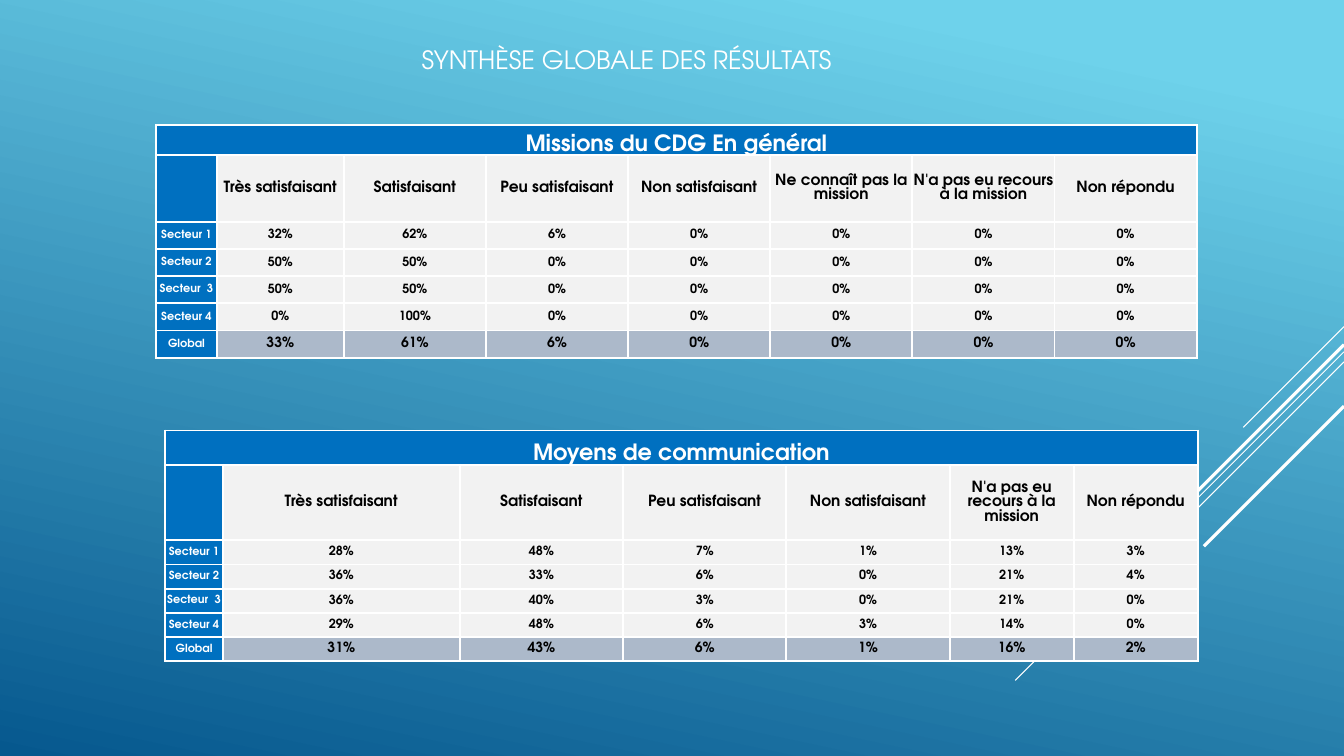
from lxml import etree
from pptx import Presentation
from pptx import util as u
from pptx.dml import color
from pptx.enum import shapes, text
from pptx.oxml import ns

FACE = "TeX Gyre Adventor"
WHITE, BLACK, BLUE, PALE, GREY = "FFFFFF", "000000", "0070C0", "F2F2F2", "ACB9CA"
WIDE = 13.33

# Top end at the right edge, run along 45 degrees, width in points
RAYS = [(3.24, 1, 0.75), (3.49, 3.26, 0.75), (3.59, 2.07, 0.75),
        (3.42, 1.91, 2.25), (4.03, 1.39, 2.25)]

SIDES = ["Secteur 1", "Secteur 2", "Secteur  3", "Secteur 4", "Global"]
RATES = ["Très satisfaisant", "Satisfaisant", "Peu satisfaisant", "Non satisfaisant"]
SKIP = "N'a pas eu recours à la mission"
NONE = "Non répondu"

TABLES = [
    dict(name="Missions du CDG En général", left=1.55, top=1.24,
         cols=[0.6, 1.26] + [1.41] * 6, rows=[0.3, 0.66] + [0.27] * 5,
         heads=RATES + ["Ne connaît pas la mission", SKIP, NONE],
         data=[[32, 62, 6, 0, 0, 0, 0],
               [50, 50, 0, 0, 0, 0, 0],
               [50, 50, 0, 0, 0, 0, 0],
               [0, 100, 0, 0, 0, 0, 0],
               [33, 61, 6, 0, 0, 0, 0]]),
    dict(name="Moyens de communication", left=1.64, top=4.27,
         cols=[0.57, 2.35] + [1.62] * 3 + [1.23] * 2,
         rows=[0.34, 0.75] + [0.24] * 5,
         heads=RATES + [SKIP, NONE],
         data=[[28, 48, 7, 1, 13, 3],
               [36, 33, 6, 0, 21, 4],
               [36, 40, 3, 0, 21, 0],
               [29, 48, 6, 3, 14, 0],
               [31, 43, 6, 1, 16, 2]]),
]


def rgb(code):
    return color.RGBColor.from_string(code)


def assign(item, **vals):
    for key, val in vals.items():
        setattr(item, key, val)


def write(frame, words, size, tint, bold):
    para = frame.paragraphs[0]
    para.alignment = text.PP_ALIGN.CENTER
    if words:
        run = para.add_run()
        run.text = words
        assign(run.font, name=FACE, size=u.Pt(size), bold=bold)
        run.font.color.rgb = rgb(tint)


def paint(slide):
    """Fill the background with its gradient."""
    fill = slide.background.fill
    fill.gradient()
    fill.gradient_angle = 360 - 102
    for stop, (place, code) in zip(fill.gradient_stops,
                                   [(0.1, "6ED2EB"), (1, "06588E")]):
        stop.position = place
        stop.color.rgb = rgb(code)


def add_ray(slide, top, run, width):
    ends = [u.Inches(n) for n in (WIDE, top, WIDE - run, top + run)]
    ray = slide.shapes.add_connector(shapes.MSO_CONNECTOR.STRAIGHT, *ends)
    ray.line.color.rgb = rgb(WHITE)
    ray.line.width = u.Pt(width)
    etree.SubElement(ray._element.spPr, ns.qn("a:effectLst"))


def edge(cell):
    """Draw a white border on all four sides."""
    props = cell._tc.get_or_add_tcPr()
    for spot, side in enumerate("LRTB"):
        line = etree.Element(ns.qn("a:ln" + side), w=str(u.Pt(1.5)))
        fill = etree.SubElement(line, ns.qn("a:solidFill"))
        etree.SubElement(fill, ns.qn("a:srgbClr"), val=WHITE)
        props.insert(spot, line)


def look(row, col):
    """Give the fill, text size and text colour of a cell."""
    if row == 0:
        return BLUE, 16, WHITE
    if col == 0:
        return BLUE, 8, WHITE
    if row == 1:
        return PALE, 11, BLACK
    if row == 1 + len(SIDES):
        return GREY, 10, BLACK
    return PALE, 9, BLACK


def add_grid(slide, name, left, top, cols, rows, heads, data):
    box = [u.Inches(n) for n in (left, top, sum(cols), sum(rows))]
    grid = slide.shapes.add_table(len(rows), len(cols), *box).table
    assign(grid, first_row=False, horz_banding=False)
    for col, width in zip(grid.columns, cols):
        col.width = u.Inches(width)
    for row, height in zip(grid.rows, rows):
        row.height = u.Inches(height)
    lines = [[name] + [""] * len(heads), [""] + heads]
    lines += [[side] + [f"{n}%" for n in nums] for side, nums in zip(SIDES, data)]
    for r, line in enumerate(lines):
        for c, words in enumerate(line):
            cell = grid.cell(r, c)
            back, size, tint = look(r, c)
            anchor = text.MSO_ANCHOR.MIDDLE if r else text.MSO_ANCHOR.BOTTOM
            assign(cell, margin_left=0, margin_right=0, margin_top=0,
                   margin_bottom=0, vertical_anchor=anchor)
            cell.fill.solid()
            cell.fill.fore_color.rgb = rgb(back)
            edge(cell)
            write(cell.text_frame, words, size, tint, True)
    grid.cell(0, 0).merge(grid.cell(0, len(heads)))


def main():
    deck = Presentation()
    assign(deck, slide_width=u.Inches(WIDE), slide_height=u.Inches(7.5))
    slide = deck.slides.add_slide(deck.slide_layouts[5])
    paint(slide)
    title = slide.shapes.title
    assign(title, left=u.Inches(1.55), top=u.Inches(0.1),
           width=u.Inches(9.33), height=u.Inches(0.97))
    title.text_frame.vertical_anchor = text.MSO_ANCHOR.MIDDLE
    write(title.text_frame, "SYNTHÈSE GLOBALE DES RÉSULTATS", 18, WHITE, False)
    for ray in RAYS:
        add_ray(slide, *ray)
    for table in TABLES:
        add_grid(slide, **table)
    deck.save("out.pptx")


if __name__ == "__main__":
    main()
